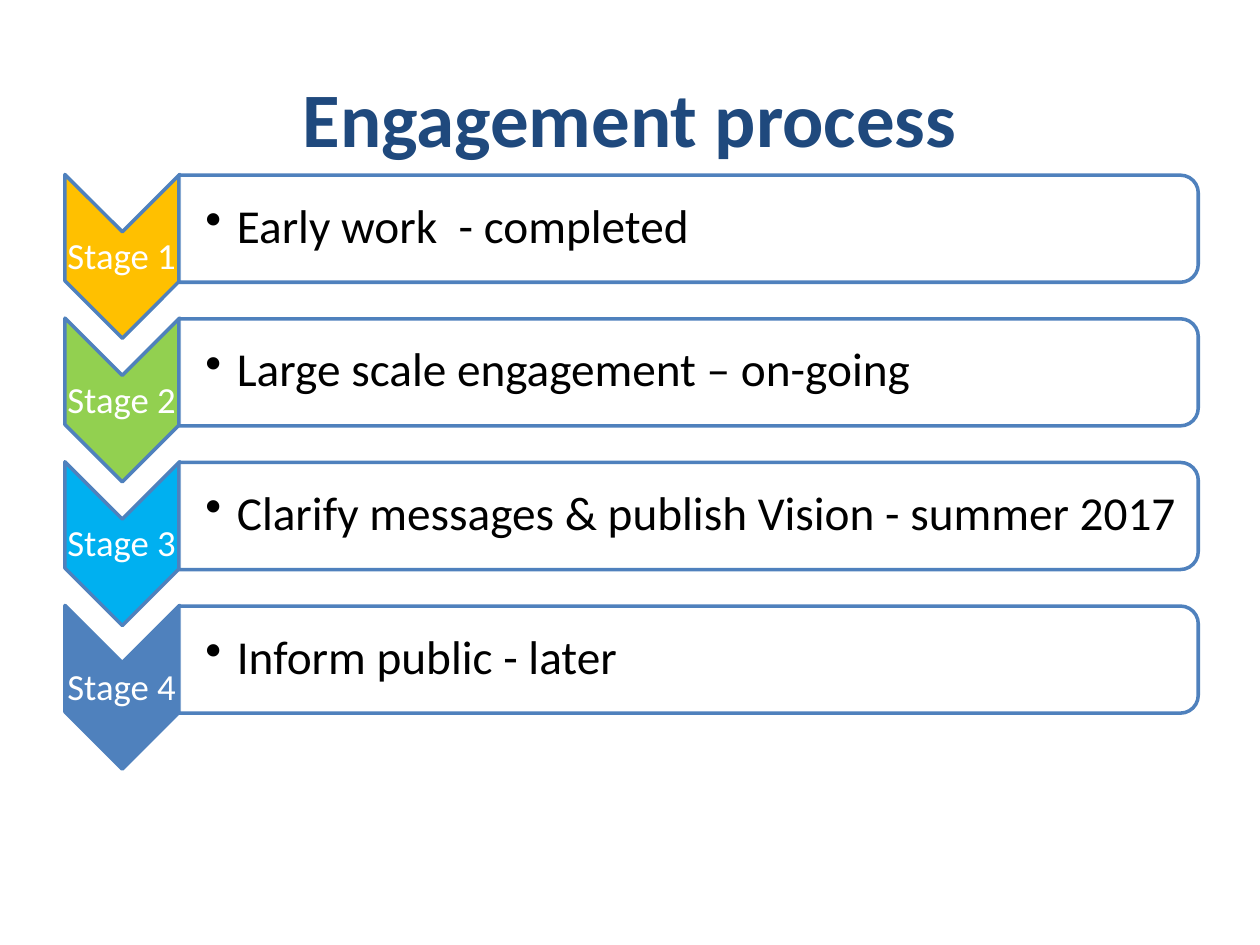
from lxml import etree
from pptx import Presentation
from pptx import util as u
from pptx.dml.color import RGBColor
from pptx.enum import shapes, text
from pptx.oxml import ns

COLOURS = {
    "title": "1F497D",
    "outline": "4F81BD",
    "white": "FFFFFF",
    "black": "000000",
    "amber": "FFC000",
    "green": "92D050",
    "sky": "00B0F0",
    "blue": "4F81BD",
}
STAGES = [
    ("Stage 1", "Early work  - completed", "amber"),
    ("Stage 2", "Large scale engagement – on-going", "green"),
    ("Stage 3", "Clarify messages & publish Vision - summer 2017", "sky"),
    ("Stage 4", "Inform public - later", "blue"),
]
FIRST_TOP = 1.39
STAGE_STEP = 1.14


def rgb(name):
    return RGBColor.from_string(COLOURS[name])


def add_text(slide, words, box, size, colour, insets, bold=False,
             align=text.PP_ALIGN.CENTER, spacing=0.9):
    label = slide.shapes.add_textbox(*map(u.Inches, box))
    frame = label.text_frame
    frame.word_wrap = True
    frame.vertical_anchor = text.MSO_ANCHOR.MIDDLE
    (frame.margin_left, frame.margin_top,
     frame.margin_right, frame.margin_bottom) = map(u.Inches, insets)
    frame.text = words
    paragraph = frame.paragraphs[0]
    paragraph.alignment = align
    paragraph.line_spacing = spacing
    font = paragraph.runs[0].font
    font.name, font.size, font.bold = "Calibri", u.Pt(size), bold
    font.color.rgb = rgb(colour)
    return paragraph


def add_bullet(paragraph):
    properties = paragraph._p.get_or_add_pPr()
    properties.set("marL", str(u.Inches(0.25)))
    properties.set("indent", str(u.Inches(-0.25)))
    etree.SubElement(properties, ns.qn("a:buChar")).set("char", "•")


def add_turned_shape(slide, kind, box, fill):
    turned = slide.shapes.add_shape(kind, *map(u.Inches, box))
    turned.rotation = 90
    turned.shadow.inherit = False
    turned.fill.solid()
    turned.fill.fore_color.rgb = rgb(fill)
    turned.line.color.rgb = rgb("outline")
    turned.line.width = u.Pt(2)
    return turned


def add_stage(slide, top, stage, message, colour):
    add_turned_shape(slide, shapes.MSO_SHAPE.CHEVRON,
                     (0.32, top + 0.19, 1.3, 0.91), colour)
    add_text(slide, stage, (0.51, top + 0.46, 0.91, 0.39), 21, "white", [0.01] * 4)
    panel = add_turned_shape(slide, shapes.MSO_SHAPE.ROUND_2_SAME_RECTANGLE,
                             (5.04, top - 3.62, 0.85, 8.09), "white")
    white = panel.fill._xPr.find(".//" + ns.qn("a:srgbClr"))
    etree.SubElement(white, ns.qn("a:alpha")).set("val", "90000")
    add_bullet(add_text(slide, message, (1.42, top + 0.04, 8.05, 0.76), 27, "black",
                        (0.21, 0.02, 0.02, 0.02), align=text.PP_ALIGN.LEFT))


def main():
    deck = Presentation()
    deck.slide_width, deck.slide_height = u.Inches(10), u.Inches(7.5)
    slide = deck.slides.add_slide(deck.slide_layouts[6])
    add_text(slide, "Engagement process", (0.5, 0.3, 9, 1.25), 44, "title",
             (0.1, 0.05, 0.1, 0.05), bold=True, spacing=1.0)
    for index, stage in enumerate(STAGES):
        add_stage(slide, FIRST_TOP + index * STAGE_STEP, *stage)
    deck.save("out.pptx")


if __name__ == "__main__":
    main()
